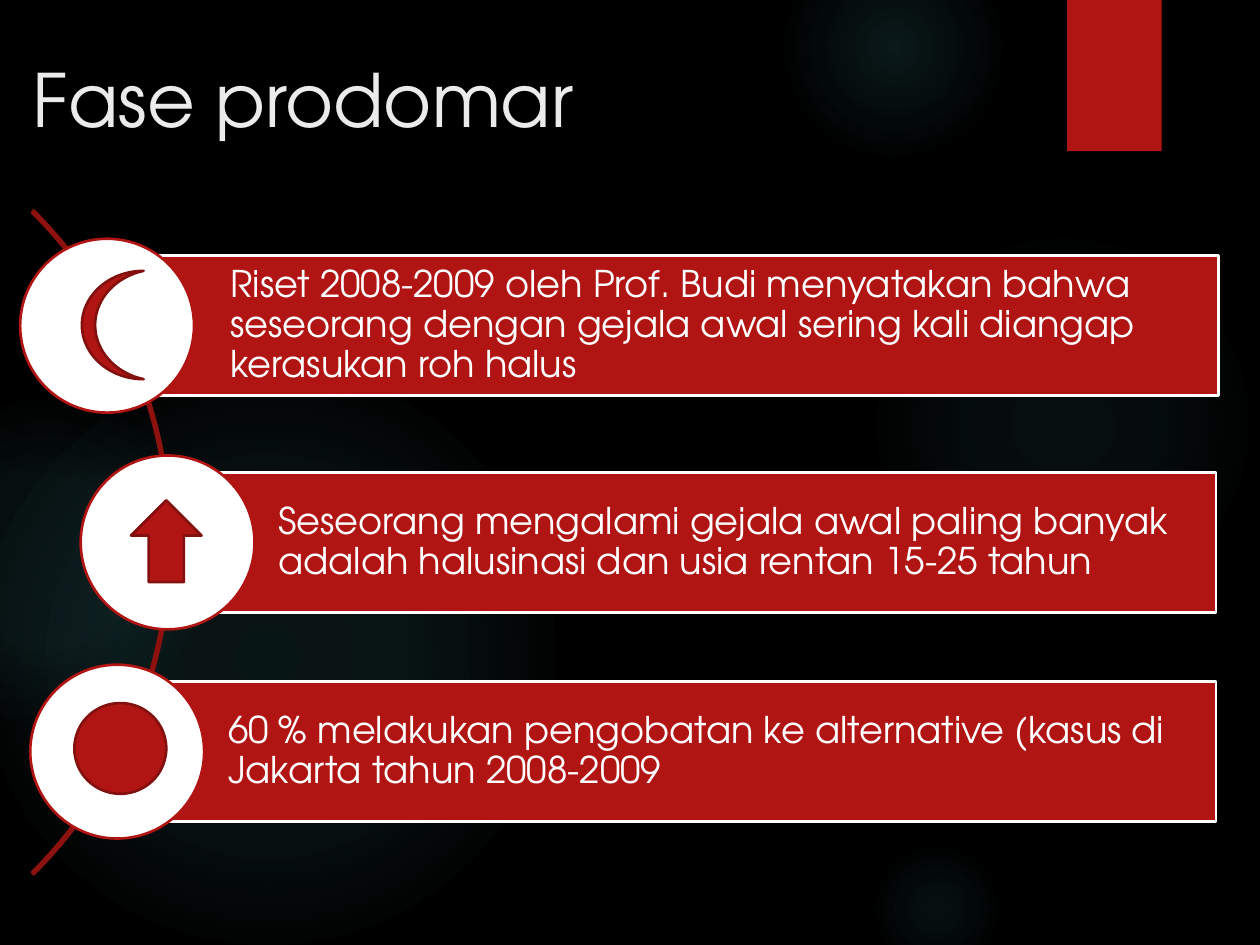
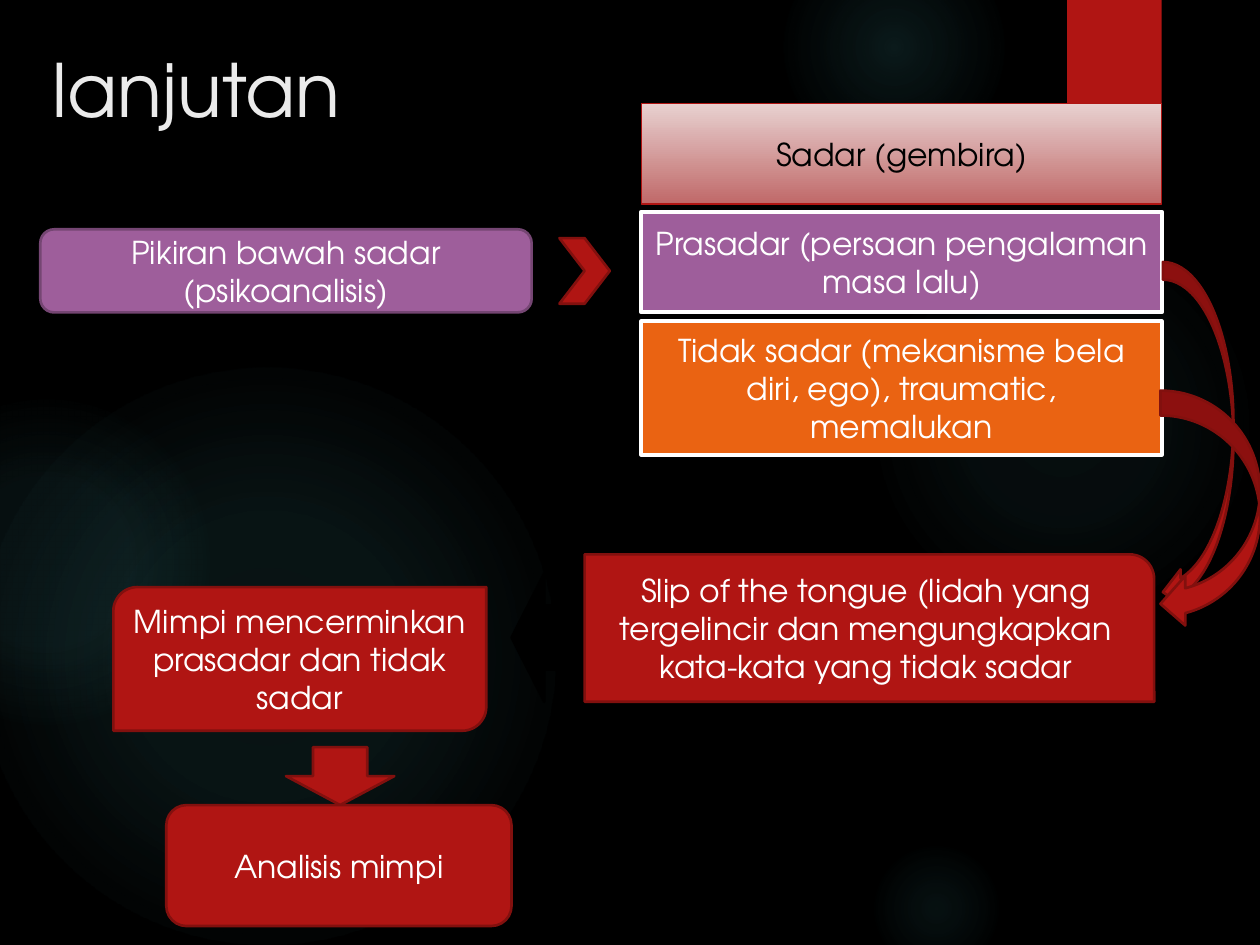
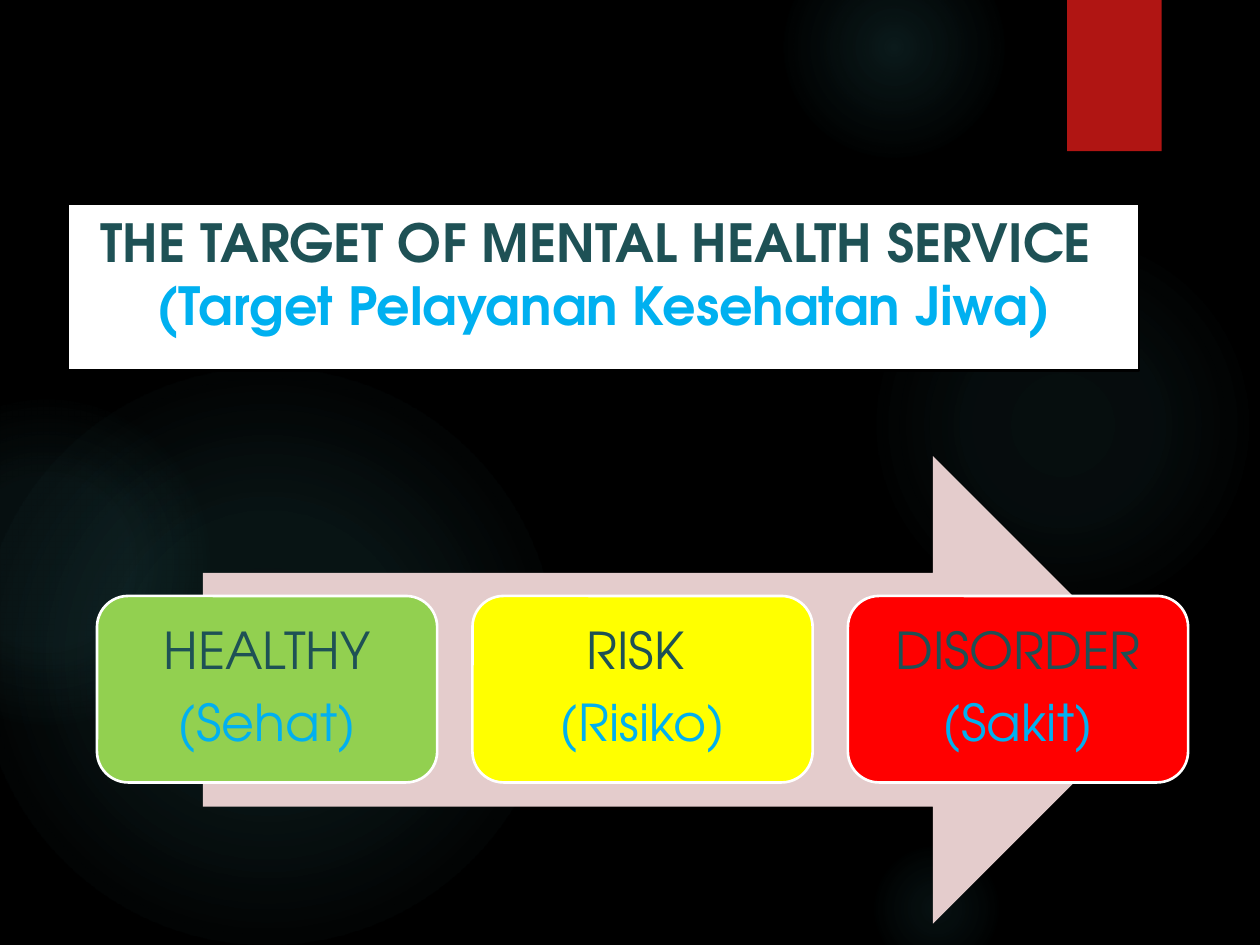
"""Build three slides on early psychosis, the unconscious mind and mental health targets."""
from pptx import Presentation
from pptx.dml.color import RGBColor
from pptx.enum.shapes import MSO_SHAPE as SHAPE
from pptx.enum.text import MSO_ANCHOR as ANCHOR, MSO_AUTO_SIZE as AUTO, PP_ALIGN as ALIGN
from pptx.oxml import parse_xml
from pptx.oxml.ns import nsdecls, qn
from pptx.util import Inches, Pt

FONT = "TeX Gyre Adventor"
C = dict(black="000000", white="FFFFFF", title="EBEBEB", red="B01513", edge="82100E",
         arc="8D110F", glow="50B9C1", purple="9E5E9B", plum="754673", orange="EA6312",
         blush="E8D1D0", rose="C06969", pink="E4CCCC", teal="1E5155", sky="00B0F0",
         green="92D050", yellow="FFFF00", alert="FF0000")

GLOWS = [
    (6.89, 1.83, 3.08, [(0, 7), (36, 6), (69, 0)]),
    (6.22, -0.5, 1.75, [(0, 14), (36, 7), (73, 0)]),
    (6.89, 6.67, 1.08, [(0, 9), (36, 5), (66, 0)]),
    (-0.17, 2.92, 4.58, [(0, 11), (36, 10), (75, 0)]),
    (-0.92, 3.17, 2.58, [(0, 8), (36, 8), (72, 0)]),
]
TAB = (8.47, 0, 0.75, 1.2)

PHASES = [
    (0.95, 2.03, 9.67, 0.16, "Riset 2008-2009 oleh Prof. Budi menyatakan bahwa seseorang "
                             "dengan gejala awal sering kali diangap kerasukan roh halus"),
    (1.33, 3.75, 9.65, 0.64, "Seseorang mengalami gejala awal paling banyak adalah "
                             "halusinasi dan usia rentan 15-25 tahun"),
    (0.93, 5.41, 9.65, 0.24, "60 % melakukan pengobatan ke alternative (kasus di Jakarta "
                             "tahun 2008-2009"),
]
BAR_H, DISC = 1.11, 1.38
ICONS = [
    (SHAPE.MOON, (0.65, 2.15, 0.49, 0.86), [0.214]),
    (SHAPE.UP_ARROW, (1.04, 3.97, 0.56, 0.65), []),
    (SHAPE.OVAL, (0.59, 5.58, 0.73, 0.72), []),
]

PLAIN = ("red", "edge", 1.5)
MIND = [
    (SHAPE.FLOWCHART_ALTERNATE_PROCESS, (0.32, 1.82, 3.9, 0.66), ("purple", "plum", 1.5),
     "Pikiran bawah sadar (psikoanalisis)"),
    (SHAPE.RECTANGLE, (5.09, 0.82, 4.13, 0.8), (None, "red", 0.75), "Sadar (gembira)"),
    (SHAPE.RECTANGLE, (5.09, 1.68, 4.13, 0.8), ("purple", "white", 2.25),
     "Prasadar (persaan pengalaman masa lalu)"),
    (SHAPE.RECTANGLE, (5.09, 2.55, 4.13, 1.06), ("orange", "white", 2.25),
     "Tidak sadar (mekanisme bela diri, ego), traumatic, memalukan"),
    (SHAPE.CURVED_LEFT_ARROW, (9.23, 2.08, 0.56, 2.76), PLAIN, ""),
    (SHAPE.CURVED_LEFT_ARROW, (9.21, 3.1, 0.79, 1.89), PLAIN, ""),
    (SHAPE.ROUND_1_RECTANGLE, (4.64, 4.4, 4.52, 1.17), PLAIN,
     "Slip of the tongue (lidah yang tergelincir dan mengungkapkan kata-kata yang tidak sadar"),
    (SHAPE.CHEVRON, (4.44, 1.89, 0.4, 0.52), PLAIN, ""),
    (SHAPE.LEFT_ARROW, (4.06, 4.55, 0.52, 1.02), ("black", "black", 1.5), ""),
    (SHAPE.ROUND_2_DIAG_RECTANGLE, (0.9, 4.66, 2.96, 1.14), PLAIN,
     "Mimpi mencerminkan prasadar dan tidak sadar"),
    (SHAPE.DOWN_ARROW, (2.27, 5.93, 0.86, 0.46), PLAIN, ""),
    (SHAPE.FLOWCHART_ALTERNATE_PROCESS, (1.32, 6.39, 2.74, 0.96), PLAIN, "Analisis mimpi"),
]

TARGET_TITLE = [("THE TARGET OF MENTAL HEALTH SERVICE ", "teal"),
                ("(Target Pelayanan Kesehatan Jiwa)", "sky")]
TARGETS = [("HEALTHY", "(Sehat)", "green"), ("RISK ", "(Risiko)", "yellow"),
           ("DISORDER", "(Sakit)", "alert")]


def rgb(name):
    return RGBColor.from_string(C[name])


def paint(sp, fill=None, line=None, width=1.5):
    if fill:
        sp.fill.solid()
        sp.fill.fore_color.rgb = rgb(fill)
    else:
        sp.fill.background()
    if line:
        sp.line.color.rgb = rgb(line)
        sp.line.width = Pt(width)
    else:
        sp.line.fill.background()


def add(s, kind, box, fill=None, line=None, width=1.5, adj=()):
    sp = s.shapes.add_shape(kind, *map(Inches, box))
    sp.shadow.inherit = False
    paint(sp, fill, line, width)
    for i, value in enumerate(adj):
        sp.adjustments[i] = value
    return sp


def gradient(sp, stops, direction):
    gs = "".join(f'<a:gs pos="{pos * 1000}"><a:srgbClr val="{C[color]}">'
                 f'<a:alpha val="{alpha * 1000}"/></a:srgbClr></a:gs>'
                 for pos, color, alpha in stops)
    grad = parse_xml(f'<a:gradFill {nsdecls("a")} rotWithShape="1"><a:gsLst>{gs}</a:gsLst>'
                     f'{direction}</a:gradFill>')
    spPr = sp._element.spPr
    spPr.replace(spPr.find(qn("a:noFill")), grad)


def add_run(p, text, size, color, bold=False):
    r = p.add_run()
    r.text = text
    r.font.name, r.font.size, r.font.bold = FONT, Pt(size), bold
    r.font.color.rgb = rgb(color)


def write(sp, lines, size, align=ALIGN.CENTER, insets=None, spacing=None, after=0):
    tf = sp.text_frame
    tf.word_wrap, tf.vertical_anchor = True, ANCHOR.MIDDLE
    if insets:
        tf.margin_left, tf.margin_top, tf.margin_right, tf.margin_bottom = map(Inches, insets)
    for i, (text, color) in enumerate(lines):
        p = tf.add_paragraph() if i else tf.paragraphs[0]
        p.alignment, p.line_spacing, p.space_after = align, spacing, Pt(after)
        add_run(p, text, size, color)


def set_title(s, box, lines, size=42, bold=False, align=ALIGN.LEFT):
    sp = s.shapes.title
    sp.left, sp.top, sp.width, sp.height = map(Inches, box)
    tf = sp.text_frame
    tf.word_wrap, tf.auto_size, tf.vertical_anchor = True, AUTO.NONE, ANCHOR.TOP
    p = tf.paragraphs[0]
    p.alignment = align
    for i, (text, color) in enumerate(lines):
        if i:
            p.add_line_break()
        add_run(p, text, size, color, bold)
    return sp


def decorate(layout, s):
    layout.background.fill.solid()
    layout.background.fill.fore_color.rgb = rgb("black")
    center = '<a:path path="circle"><a:fillToRect l="50000" t="50000" r="50000" b="50000"/></a:path>'
    parts = []
    for x, y, d, stops in GLOWS:
        sp = add(s, SHAPE.OVAL, (x, y, d, d))
        gradient(sp, [(pos, "glow", alpha) for pos, alpha in stops], center)
        parts.append(sp)
    parts.append(add(s, SHAPE.RECTANGLE, TAB, "red"))
    for i, sp in enumerate(parts):
        layout.shapes._spTree.insert(2 + i, sp._element)


def phase_slide(s):
    set_title(s, (0.16, 0.38, 7.72, 0.86), [("Fase prodomar", "title")])
    add(s, SHAPE.BLOCK_ARC, (-6.09, 0.58, 7.45, 7.45), None, "arc", adj=(189, 27, 0.003))
    for x, y, right, disc_x, text in PHASES:
        bar = add(s, SHAPE.RECTANGLE, (x, y, right - x, BAR_H), "red", "white")
        write(bar, [(text, "white")], 21, ALIGN.LEFT, (0.88, 0.06, 0.06, 0.06), 0.9, 7)
        add(s, SHAPE.OVAL, (disc_x, y - (DISC - BAR_H) / 2, DISC, DISC), "white", "red")
    for kind, box, adj in ICONS:
        add(s, kind, box, "red", "edge", adj=adj)


def mind_slide(s):
    set_title(s, (0.32, 0.3, 7.72, 0.76), [("lanjutan", "title")])
    for kind, box, style, text in MIND:
        sp = add(s, kind, box, *style)
        if style[0] is None:
            gradient(sp, [(0, "blush", 100), (100, "rose", 100)],
                     '<a:lin ang="5400000" scaled="0"/>')
        if text:
            write(sp, [(text, "white" if style[0] else "black")], 18)


def target_slide(s):
    title = set_title(s, (0.54, 1.62, 8.5, 1.32), TARGET_TITLE, 30, True, ALIGN.CENTER)
    paint(title, "white", "black")
    add(s, SHAPE.RIGHT_ARROW, (1.61, 3.62, 7.65, 3.71), "pink")
    for i, (name, local, color) in enumerate(TARGETS):
        sp = add(s, SHAPE.ROUNDED_RECTANGLE, (0.77 + 2.98 * i, 4.73, 2.7, 1.48), color, "white")
        write(sp, [(name, "teal"), (local, "sky")], 29, insets=(0.12,) * 4, spacing=0.9, after=10)


def main():
    prs = Presentation()
    prs.slide_width, prs.slide_height = Inches(10), Inches(7.5)
    layout = prs.slide_layouts[5]
    for i, build in enumerate((phase_slide, mind_slide, target_slide)):
        s = prs.slides.add_slide(layout)
        if i == 0:
            decorate(layout, s)
        build(s)
    prs.save("out.pptx")


if __name__ == "__main__":
    main()
